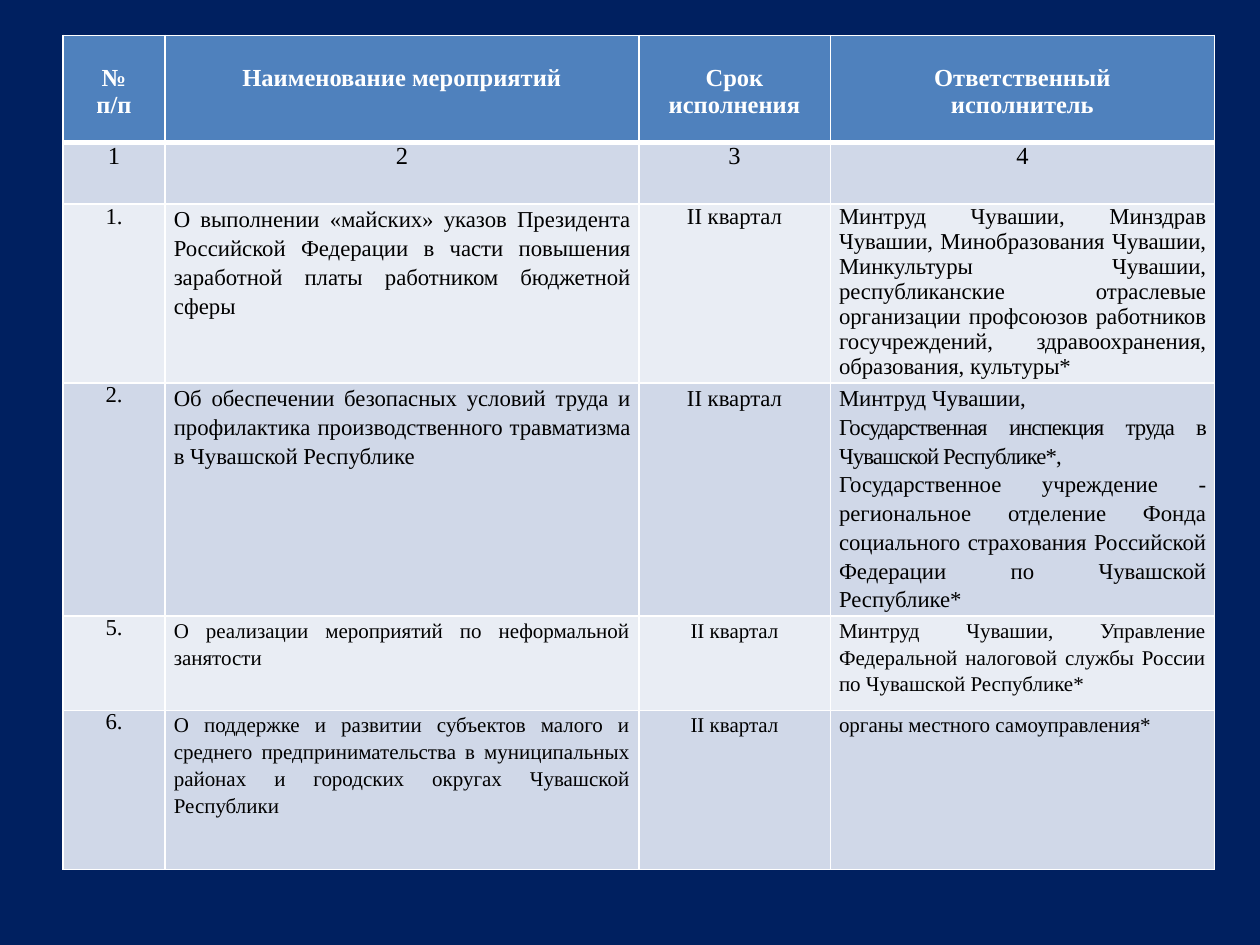
from dataclasses import dataclass

from lxml import etree
from pptx import Presentation
from pptx.dml.color import RGBColor
from pptx.enum.text import PP_ALIGN
from pptx.oxml.ns import qn
from pptx.util import Inches, Pt

CENTER, JUSTIFY = PP_ALIGN.CENTER, PP_ALIGN.JUSTIFY
NAVY = RGBColor(0x00, 0x20, 0x60)
BLUE = RGBColor(0x4F, 0x81, 0xBD)
DARK_BAND = RGBColor(0xD0, 0xD8, 0xE8)
LIGHT_BAND = RGBColor(0xE9, 0xED, 0xF4)
WHITE = RGBColor(0xFF, 0xFF, 0xFF)
BLACK = RGBColor(0x00, 0x00, 0x00)
FONT = "Times New Roman"

TABLE_LEFT, TABLE_TOP = 0.5, 0.28
COLUMN_WIDTHS = (0.81, 3.76, 1.52, 3.05)
ROW_HEIGHTS = (0.85, 0.49, 1.42, 1.85, 0.75, 1.26)
SIDE_MARGIN, HEADER_TOP_MARGIN = 0.07, 0.23
THIN, THICK = 1, 3
SPACED = 1.15
QUARTER = "II квартал"


@dataclass
class Entry:
    """One cell: a line of text is one paragraph."""
    text: str
    size: float = 13
    align: PP_ALIGN = CENTER
    spacing: float = 1.0
    bold: bool = False
    color: RGBColor = BLACK
    tight_line: int = -1


def header(text: str) -> Entry:
    return Entry(text, size=14, bold=True, color=WHITE)


def activity(number: str, name: str, executor: str, size: float = 13,
             number_spacing: float = 0.97, term_spacing: float = SPACED,
             executor_spacing: float = SPACED, tight_line: int = -1) -> list[Entry]:
    return [
        Entry(number, spacing=number_spacing),
        Entry(name, size, JUSTIFY, SPACED),
        Entry(QUARTER, size, CENTER, term_spacing),
        Entry(executor, size, JUSTIFY, executor_spacing, tight_line=tight_line),
    ]


ROWS = [
    [header(text) for text in ("№\nп/п", "Наименование мероприятий",
                               "Срок\nисполнения", "Ответственный\nисполнитель")],
    [Entry(text, size=14) for text in "1234"],
    activity(
        "1.",
        "О выполнении «майских» указов Президента Российской Федерации в части "
        "повышения заработной платы работником бюджетной сферы",
        "Минтруд Чувашии, Минздрав Чувашии, Минобразования Чувашии, Минкультуры "
        "Чувашии, республиканские отраслевые организации профсоюзов работников "
        "госучреждений, здравоохранения, образования, культуры*",
        number_spacing=1.0, term_spacing=1.0, executor_spacing=1.0),
    activity(
        "2.",
        "Об обеспечении безопасных условий труда и профилактика производственного "
        "травматизма в Чувашской Республике",
        "Минтруд Чувашии,\n"
        "Государственная инспекция труда в Чувашской Республике*,\n"
        "Государственное учреждение - региональное отделение Фонда социального "
        "страхования Российской Федерации по Чувашской Республике*",
        tight_line=1),
    activity(
        "5.",
        "О реализации мероприятий по неформальной занятости",
        "Минтруд Чувашии, Управление Федеральной налоговой службы России "
        "по Чувашской Республике*",
        size=12),
    activity(
        "6.",
        "О поддержке и развитии субъектов малого и среднего предпринимательства "
        "в муниципальных районах и городских округах Чувашской Республики",
        "органы местного самоуправления*",
        size=12),
]


def set_borders(cell, widths: dict[str, float]) -> None:
    properties = cell._tc.get_or_add_tcPr()
    for side, width in widths.items():
        line = etree.SubElement(properties, qn(f"a:{side}"), w=str(Pt(width)))
        fill = etree.SubElement(line, qn("a:solidFill"))
        etree.SubElement(fill, qn("a:srgbClr"), val=str(WHITE))


def write_entry(cell, entry: Entry) -> None:
    frame = cell.text_frame
    frame.text = entry.text
    font_format = {"name": FONT, "size": Pt(entry.size), "bold": entry.bold}
    for index, para in enumerate(frame.paragraphs):
        para.alignment = entry.align
        para.line_spacing = entry.spacing
        for span in para.runs:
            for name, value in font_format.items():
                setattr(span.font, name, value)
            span.font.color.rgb = entry.color
            if index == entry.tight_line:
                span._r.get_or_add_rPr().set("spc", "-50")


def draw_table(slide) -> None:
    frame = slide.shapes.add_table(
        len(ROWS), len(COLUMN_WIDTHS), Inches(TABLE_LEFT), Inches(TABLE_TOP),
        Inches(sum(COLUMN_WIDTHS)), Inches(sum(ROW_HEIGHTS)))
    table = frame.table
    table.horz_banding = False
    for column, width in zip(table.columns, COLUMN_WIDTHS):
        column.width = Inches(width)
    for row, height in zip(table.rows, ROW_HEIGHTS):
        row.height = Inches(height)

    for row_index, entries in enumerate(ROWS):
        is_header = row_index == 0
        band = BLUE if is_header else (LIGHT_BAND, DARK_BAND)[row_index % 2]
        margins = {
            "margin_left": SIDE_MARGIN, "margin_right": SIDE_MARGIN,
            "margin_top": HEADER_TOP_MARGIN if is_header else 0, "margin_bottom": 0,
        }
        borders = {
            "lnL": THIN, "lnR": THIN,
            "lnT": THICK if row_index == 1 else THIN,
            "lnB": THICK if is_header else THIN,
        }
        for column_index, entry in enumerate(entries):
            cell = table.cell(row_index, column_index)
            for name, value in margins.items():
                setattr(cell, name, Inches(value))
            set_borders(cell, borders)
            cell.fill.solid()
            cell.fill.fore_color.rgb = band
            write_entry(cell, entry)


def main() -> None:
    deck = Presentation()
    deck.slide_width, deck.slide_height = Inches(10), Inches(7.5)
    slide = deck.slides.add_slide(deck.slide_layouts.get_by_name("Blank"))
    slide.background.fill.solid()
    slide.background.fill.fore_color.rgb = NAVY
    draw_table(slide)
    deck.save("out.pptx")


if __name__ == "__main__":
    main()
